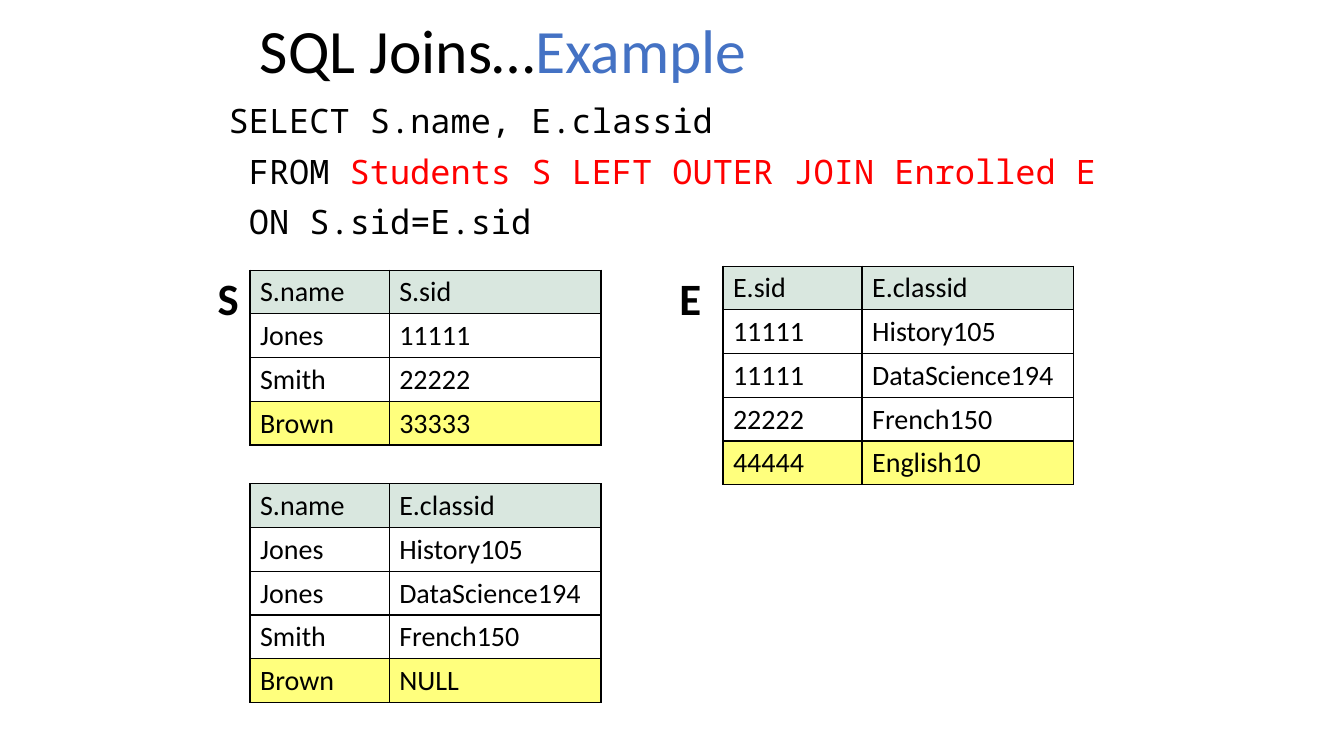
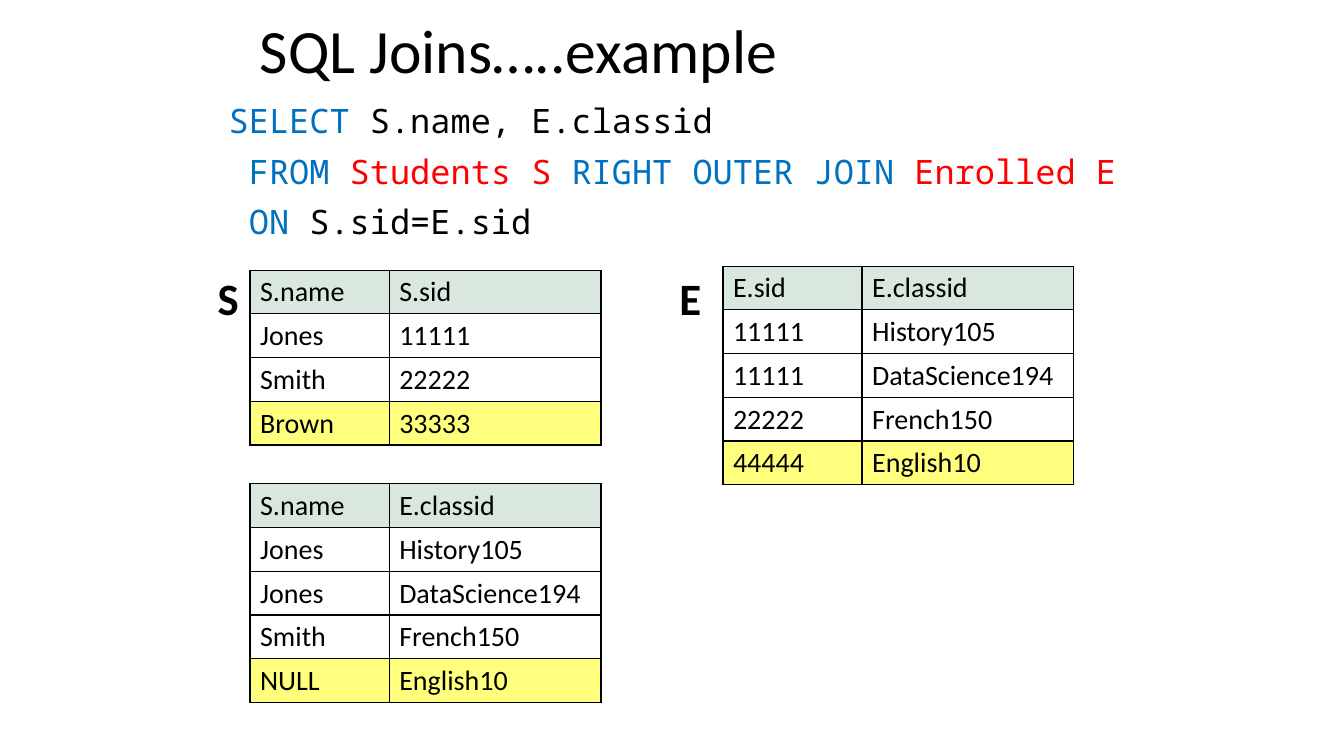
from lxml.etree import SubElement
from pptx import Presentation
from pptx.dml.color import RGBColor
from pptx.enum.text import MSO_ANCHOR as Anchor, MSO_AUTO_SIZE as AutoSize
from pptx.oxml.ns import qn
from pptx.util import Emu, Pt

BLACK = RGBColor(0x00, 0x00, 0x00)
ACCENT = RGBColor(0x44, 0x72, 0xC4)
BLUE = RGBColor(0x00, 0x70, 0xC0)
RED = RGBColor(0xFF, 0x00, 0x00)
GREEN = RGBColor(0xD9, 0xE7, 0xDF)
YELLOW = RGBColor(0xFF, 0xFF, 0x7D)

SCALE = 9144
WIDTH, HEIGHT = 1333, 750
COLS = (138, 210)
ROW = 41
LEFT, RIGHT = 248, 717


def px(n):
    return Emu(n * SCALE)


class Deck:
    font = "Calibri"
    mono = "Noto Sans Mono"

    def __init__(self):
        self.prs = Presentation()
        self.prs.slide_width, self.prs.slide_height = px(WIDTH), px(HEIGHT)
        self.s = None

    def slide(self):
        self.s = self.prs.slides.add_slide(self.prs.slide_layouts[6])

    def run(self, p, text, size, color=BLACK, font=None, bold=False):
        r = p.add_run()
        r.text = text
        r.font.size = Pt(size)
        r.font.name = font or self.font
        r.font.bold = bold
        r.font.color.rgb = color

    def box(self, x, y, w, h, anchor=Anchor.TOP, wrap=True):
        tf = self.s.shapes.add_textbox(px(x), px(y), px(w), px(h)).text_frame
        tf.word_wrap = wrap
        tf.vertical_anchor = anchor
        return tf

    def title(self, runs):
        p = self.box(LEFT, 8, 848, 91, Anchor.MIDDLE).paragraphs[0]
        p.line_spacing = 0.9
        for text, color in runs:
            self.run(p, text, 44, color)

    def query(self, lines):
        tf = self.box(217, 99, 919, 619)
        for i, runs in enumerate(lines):
            p = tf.add_paragraph() if i else tf.paragraphs[0]
            p.line_spacing = 0.9
            p.space_before = Pt(10)
            for text, color in runs:
                self.run(p, text, 24, color, self.mono)

    def label(self, x, text):
        tf = self.box(x, 264, 41, 64, wrap=False)
        tf.auto_size = AutoSize.SHAPE_TO_FIT_TEXT
        self.run(tf.paragraphs[0], text, 32, bold=True)

    def borders(self, cell):
        tcPr = cell._tc.get_or_add_tcPr()
        for side in ("lnL", "lnR", "lnT", "lnB"):
            ln = SubElement(tcPr, qn(f"a:{side}"), w=str(Pt(1)))
            fill = SubElement(ln, qn("a:solidFill"))
            SubElement(fill, qn("a:srgbClr"), val=str(BLACK))

    def table(self, x, y, rows):
        frame = self.s.shapes.add_table(len(rows), len(COLS), px(x), px(y),
                                        px(sum(COLS)), px(ROW * len(rows)))
        table = frame.table
        table.first_row = table.horz_banding = False
        for column, width in zip(table.columns, COLS):
            column.width = px(width)
        fills = {0: GREEN, len(rows) - 1: YELLOW}
        for i, row in enumerate(rows):
            table.rows[i].height = px(ROW)
            for j, text in enumerate(row):
                cell = table.cell(i, j)
                self.borders(cell)
                if i in fills:
                    cell.fill.solid()
                    cell.fill.fore_color.rgb = fills[i]
                else:
                    cell.fill.background()
                self.run(cell.text_frame.paragraphs[0], text, 20)


STUDENTS = [("S.name", "S.sid"), ("Jones", "11111"), ("Smith", "22222"),
            ("Brown", "33333")]
ENROLLED = [("E.sid", "E.classid"), ("11111", "History105"),
            ("11111", "DataScience194"), ("22222", "French150"),
            ("44444", "English10")]
MATCHES = [("S.name", "E.classid"), ("Jones", "History105"),
           ("Jones", "DataScience194"), ("Smith", "French150")]

JOINS = [
    ([("SQL Joins…", BLACK), ("Example", ACCENT)],
     [[("SELECT S.name, E.classid", BLACK)],
      [(" FROM ", BLACK), ("Students S LEFT OUTER JOIN Enrolled E", RED)],
      [(" ON S.sid=E.sid", BLACK)]],
     ("Brown", "NULL")),
    ([("SQL Joins…..example", BLACK)],
     [[("SELECT", BLUE), (" S.name, E.classid", BLACK)],
      [(" FROM ", BLUE), ("Students S ", RED), ("RIGHT OUTER JOIN ", BLUE),
       ("Enrolled E", RED)],
      [(" ON ", BLUE), ("S.sid=E.sid", BLACK)]],
     ("NULL", "English10")),
]


def main():
    deck = Deck()
    for title, query, unmatched in JOINS:
        deck.slide()
        deck.title(title)
        deck.query(query)
        deck.table(LEFT, 268, STUDENTS)
        deck.table(RIGHT, 264, ENROLLED)
        deck.table(LEFT, 480, MATCHES + [unmatched])
        deck.label(664, "E")
        deck.label(206, "S")
    deck.prs.save("out.pptx")


if __name__ == "__main__":
    main()
